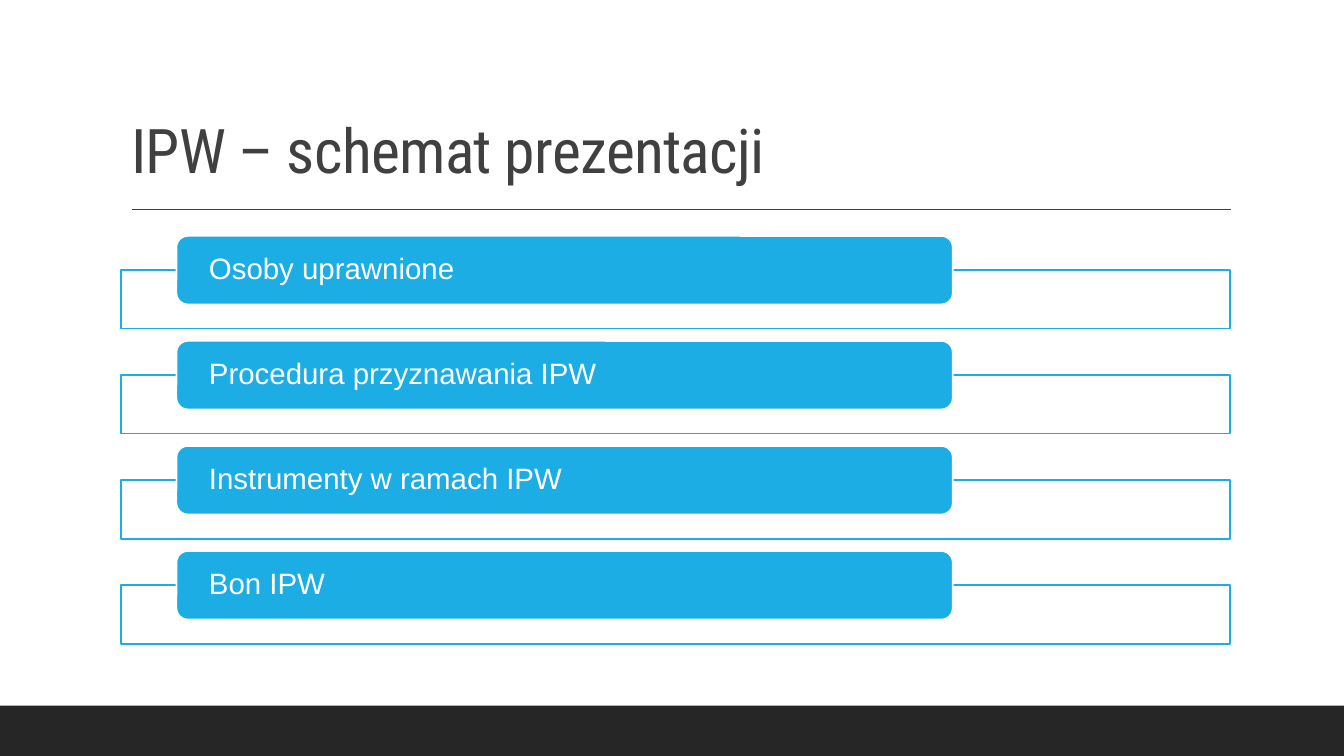
"""Build the IPW presentation outline slide."""
from dataclasses import dataclass

from lxml import etree
from pptx import Presentation
from pptx import util as u
from pptx.dml.color import RGBColor
from pptx.enum import shapes, text
from pptx.oxml.ns import qn

WHITE, BLUE, GREY, DARK = "FFFFFF", "1CADE4", "404040", "262626"
FIRST_TOP, ROW_STEP = 2.34, 1.042
FRAME_OFFSET = 0.34


@dataclass(frozen=True)
class Box:
    left: float
    top: float
    width: float
    height: float

    def lengths(self) -> tuple:
        return tuple(u.Inches(n) for n in (self.left, self.top, self.width, self.height))


def color(value: str) -> RGBColor:
    return RGBColor.from_string(value)


def add_box(slide, kind, box: Box, fill: str, line: str | None = None):
    shape = slide.shapes.add_shape(kind, *box.lengths())
    shape.shadow.inherit = False
    shape.fill.solid()
    shape.fill.fore_color.rgb = color(fill)
    if line:
        shape.line.color.rgb = color(line)
        shape.line.width = u.Pt(1.25)
    else:
        shape.line.fill.background()
    return shape


def format_text(shape, font: str, size: float, ink: str) -> None:
    paragraph = shape.text_frame.paragraphs[0]
    paragraph.alignment = text.PP_ALIGN.LEFT
    paragraph.line_spacing = 0.9
    for run in paragraph.runs:
        run.font.name = font
        run.font.size = u.Pt(size)
        run.font.color.rgb = color(ink)


def add_title(slide, wording: str) -> None:
    title = slide.shapes.title
    title.left, title.top, title.width, title.height = Box(1.2, 0.31, 11, 1.59).lengths()
    frame = title.text_frame
    frame.text = wording
    frame.word_wrap = True
    frame.auto_size = text.MSO_AUTO_SIZE.NONE
    frame.vertical_anchor = text.MSO_ANCHOR.BOTTOM
    format_text(title, "Roboto Condensed", 44, GREY)
    frame.paragraphs[0].runs[0].font._element.set("spc", "-50")


def add_rule(slide) -> None:
    rule = slide.shapes.add_connector(
        shapes.MSO_CONNECTOR.STRAIGHT,
        u.Inches(1.31), u.Inches(2.08), u.Inches(12.21), u.Inches(2.08),
    )
    rule.line.color.rgb = color(GREY)
    rule.line.width = u.Pt(1)
    etree.SubElement(rule._element.spPr, qn("a:effectLst"))


def add_topic(slide, wording: str, top: float) -> None:
    frame_box = Box(1.2, top + FRAME_OFFSET, 11, 0.58)
    add_box(slide, shapes.MSO_SHAPE.RECTANGLE, frame_box, WHITE, BLUE)
    label_box = Box(1.75, top, 7.7, 0.68)
    label = add_box(slide, shapes.MSO_SHAPE.ROUNDED_RECTANGLE, label_box, BLUE, WHITE)
    frame = label.text_frame
    frame.text = wording
    frame.word_wrap = True
    frame.vertical_anchor = text.MSO_ANCHOR.MIDDLE
    frame.margin_left = frame.margin_right = u.Inches(0.29)
    frame.margin_top = frame.margin_bottom = 0
    format_text(label, "Arial", 21, WHITE)


def main() -> None:
    presentation = Presentation()
    presentation.slide_width = u.Inches(13.33)
    presentation.slide_height = u.Inches(7.5)
    slide = presentation.slides.add_slide(presentation.slide_layouts[5])
    add_box(slide, shapes.MSO_SHAPE.RECTANGLE, Box(0, 7, 13.33, 0.5), DARK)
    add_rule(slide)
    add_title(slide, "IPW – schemat prezentacji")
    topics = (
        "Osoby uprawnione",
        "Procedura przyznawania IPW",
        "Instrumenty w ramach IPW",
        "Bon IPW",
    )
    for row, topic in enumerate(topics):
        add_topic(slide, topic, FIRST_TOP + row * ROW_STEP)
    presentation.save("out.pptx")


if __name__ == "__main__":
    main()
